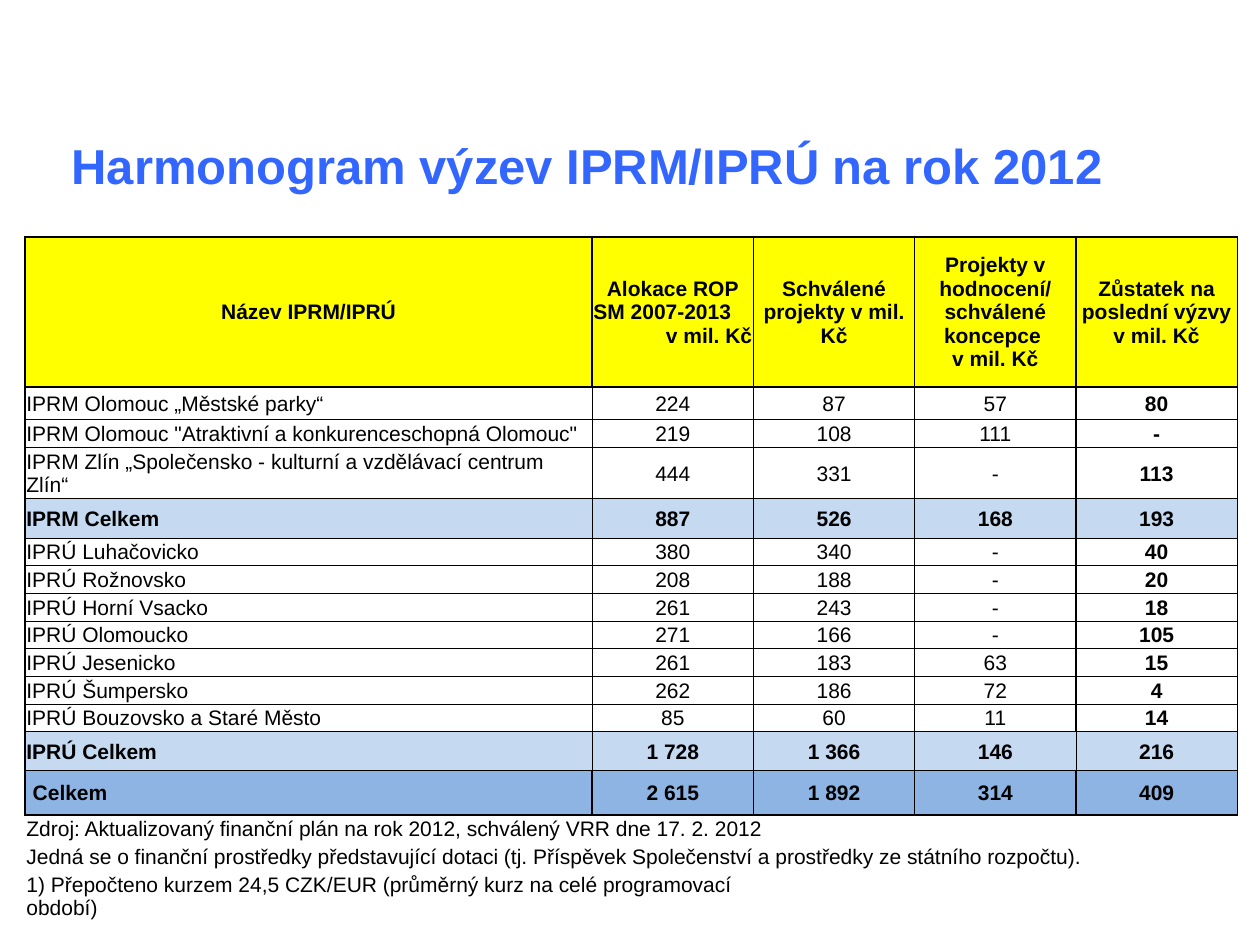
from dataclasses import dataclass

import lxml.etree
import pptx
import pptx.dml.color
import pptx.enum.text
import pptx.oxml.ns
import pptx.table
import pptx.text.text
import pptx.util

Inches = pptx.util.Inches
RGBColor = pptx.dml.color.RGBColor
Align = pptx.enum.text.PP_ALIGN
Anchor = pptx.enum.text.MSO_ANCHOR

BLUE = RGBColor(0x33, 0x66, 0xFF)
BLACK = RGBColor(0, 0, 0)
YELLOW = RGBColor(0xFF, 0xFF, 0)
PALE = RGBColor(0xC5, 0xD9, 0xF1)
MID = RGBColor(0x8D, 0xB4, 0xE3)

THIN, THICK = 0.5, 1
WIDTHS = (4.5, 1.28, 1.28, 1.28, 1.28)


@dataclass
class Row:
    cells: tuple[str, ...]
    height: float = 0.22
    fill: RGBColor | None = None
    boxed: bool = False  # thick border around every cell
    closing: bool = False  # thick border only on the left and below


@dataclass
class Note:
    text: str
    span: int = 5


ROWS = [
    Row(("Název IPRM/IPRÚ", "Alokace ROP\nSM 2007-2013\nv mil. Kč", "Schválené projekty v mil. Kč",
         "Projekty v hodnocení/ schválené koncepce \vv mil. Kč",
         "Zůstatek na poslední výzvy v mil. Kč"), 1.19, YELLOW, boxed=True),
    Row(("IPRM Olomouc „Městské parky“", "224", "87", "57", "80"), 0.26),
    Row(('IPRM Olomouc "Atraktivní a konkurenceschopná Olomouc"', "219", "108", "111", "-")),
    Row(("IPRM Zlín „Společensko - kulturní a vzdělávací centrum Zlín“", "444", "331", "-", "113")),
    Row(("IPRM Celkem", "887", "526", "168", "193"), 0.31, PALE),
    Row(("IPRÚ Luhačovicko", "380", "340", "-", "40")),
    Row(("IPRÚ Rožnovsko", "208", "188", "-", "20")),
    Row(("IPRÚ Horní Vsacko", "261", "243", "-", "18")),
    Row(("IPRÚ Olomoucko", "271", "166", "-", "105")),
    Row(("IPRÚ Jesenicko", "261", "183", "63", "15")),
    Row(("IPRÚ Šumpersko", "262", "186", "72", "4")),
    Row(("IPRÚ Bouzovsko a Staré Město", "85", "60", "11", "14")),
    Row(("IPRÚ Celkem", "1 728", "1 366", "146", "216"), 0.31, PALE, closing=True),
    Row(("Celkem", "2 615", "1 892", "314", "409"), 0.35, MID, boxed=True),
]
NOTES = [
    Note("Zdroj: Aktualizovaný finanční plán na rok 2012, schválený VRR dne 17. 2. 2012"),
    Note("Jedná se o finanční prostředky představující dotaci "
         "(tj. Příspěvek Společenství a prostředky ze státního rozpočtu)."),
    Note("1) Přepočteno kurzem 24,5 CZK/EUR (průměrný kurz na celé programovací období)", 2),
]


def write(frame: pptx.text.text.TextFrame, text: str, size: float, color: RGBColor,
          bold: bool, aligns: tuple[Align, ...]) -> None:
    """Put one paragraph per newline, with a line break at each vertical tab."""
    for i, (line, align) in enumerate(zip(text.split("\n"), aligns)):
        para = frame.add_paragraph() if i else frame.paragraphs[0]
        para.alignment = align
        for j, part in enumerate(line.split("\v")):
            if j:
                para.add_line_break()
            run = para.add_run()
            run.text = part
            run.font.name = "Arial"
            run.font.size = pptx.util.Pt(size)
            run.font.bold = bold
            run.font.color.rgb = color


def border(cell: pptx.table._Cell, widths: dict[str, float]) -> None:
    """Draw the given sides and clear the others."""
    props = cell._tc.get_or_add_tcPr()
    qn = pptx.oxml.ns.qn
    for side in "LRTB":
        line = lxml.etree.SubElement(props, qn(f"a:ln{side}"))
        if side in widths:
            line.set("w", str(pptx.util.Pt(widths[side])))
            fill = lxml.etree.SubElement(line, qn("a:solidFill"))
            lxml.etree.SubElement(fill, qn("a:srgbClr")).set("val", str(BLACK))
        else:
            line.set("w", "0")
            lxml.etree.SubElement(line, qn("a:noFill"))


def edges(row: Row, r: int, c: int) -> dict[str, float]:
    if row.boxed:
        return dict.fromkeys("LRTB", THICK)
    last = not row.closing
    return {
        "L": THICK if c == 0 or (last and c == 4) else THIN,
        "R": THICK if last and c >= 3 else THIN,
        "T": THICK if r == 1 else THIN,
        "B": THICK if row.closing else THIN,
    }


def style(cell: pptx.table._Cell, widths: dict[str, float], fill: RGBColor | None = None) -> None:
    border(cell, widths)
    cell.vertical_anchor = Anchor.MIDDLE
    cell.margin_left = cell.margin_right = cell.margin_top = Inches(0.01)
    cell.margin_bottom = 0
    if fill is None:
        cell.fill.background()
    else:
        cell.fill.solid()
        cell.fill.fore_color.rgb = fill


def fill_row(table: pptx.table.Table, r: int, row: Row) -> None:
    table.rows[r].height = Inches(row.height)
    for c, text in enumerate(row.cells):
        cell = table.cell(r, c)
        style(cell, edges(row, r, c), row.fill)
        if "\n" in text:
            aligns = (Align.CENTER, Align.LEFT, Align.RIGHT)
        else:
            aligns = (Align.CENTER if c or r == 0 else Align.LEFT,)
        if row.fill == MID and c == 0:
            cell.margin_left = Inches(0.06)
        write(cell.text_frame, text, 12, BLACK, row.fill is not None or c == 4, aligns)


def fill_note(table: pptx.table.Table, r: int, note: Note) -> None:
    table.rows[r].height = Inches(0.22)
    for c in range(len(WIDTHS)):
        style(table.cell(r, c), {"T": THICK} if r == len(ROWS) else {})
    cell = table.cell(r, 0)
    cell.merge(table.cell(r, note.span - 1))
    write(cell.text_frame, note.text, 12, BLACK, False, (Align.LEFT,))


def main() -> None:
    deck = pptx.Presentation()
    deck.slide_width, deck.slide_height = Inches(10), Inches(7.5)
    slide = deck.slides.add_slide(deck.slide_layouts[6])

    title = slide.shapes.add_textbox(Inches(0.47), Inches(0.91), Inches(9), Inches(0.79)).text_frame
    title.word_wrap = True
    title.vertical_anchor = Anchor.MIDDLE
    write(title, "Harmonogram výzev IPRM/IPRÚ na rok 2012", 28, BLUE, True, (Align.LEFT,))

    table = slide.shapes.add_table(len(ROWS) + len(NOTES), len(WIDTHS), Inches(0.2), Inches(1.88),
                                   Inches(sum(WIDTHS)), Inches(5.41)).table
    table.first_row = table.horz_banding = False
    for col, width in zip(table.columns, WIDTHS):
        col.width = Inches(width)
    for r, row in enumerate(ROWS):
        fill_row(table, r, row)
    for r, note in enumerate(NOTES, len(ROWS)):
        fill_note(table, r, note)

    deck.save("out.pptx")


if __name__ == "__main__":
    main()
